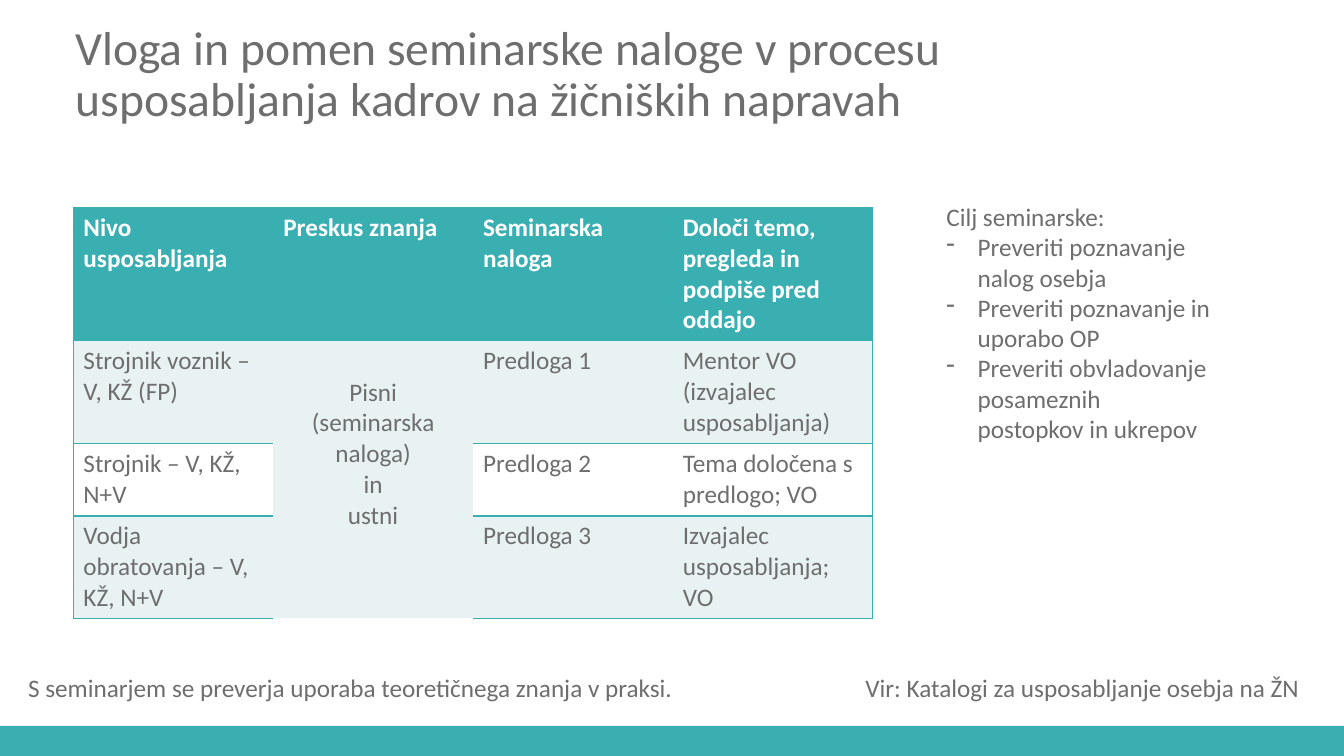
from dataclasses import dataclass

from lxml.etree import SubElement
from pptx import Presentation
from pptx.dml.color import RGBColor
from pptx.enum.shapes import MSO_SHAPE
from pptx.enum.text import MSO_ANCHOR, MSO_AUTO_SIZE, PP_ALIGN
from pptx.oxml.ns import qn
from pptx.util import Cm, Pt


@dataclass(frozen=True)
class Theme:
    font: str = "Calibri"
    title_size: int = 34
    body_size: int = 18
    accent: str = "3AAFB2"
    tint: str = "E8F2F2"
    text: str = "6E6E6E"
    white: str = "FFFFFF"


@dataclass(frozen=True)
class Box:
    left: float
    top: float
    width: float
    height: float

    def lengths(self):
        return Cm(self.left), Cm(self.top), Cm(self.width), Cm(self.height)


THEME = Theme()
PAGE = Box(0, 0, 33.87, 19.05)
TITLE = "Vloga in pomen seminarske naloge v procesu usposabljanja kadrov na žičniških napravah"
HEADER = ["Nivo usposabljanja", "Preskus znanja", "Seminarska naloga",
          "Določi temo, pregleda in podpiše pred oddajo"]
LEVELS = [
    ["Strojnik voznik – V, KŽ (FP)", "Pisni\n(seminarska naloga)\nin\nustni",
     "Predloga 1", "Mentor VO\n(izvajalec usposabljanja)"],
    ["Strojnik – V, KŽ, N+V", "", "Predloga 2", "Tema določena s predlogo; VO"],
    ["Vodja obratovanja – V, KŽ, N+V", "", "Predloga 3", "Izvajalec usposabljanja; VO"],
]
ROW_HEIGHTS = [3.36, 2.58, 1.83, 2.58]
EXAM_COLUMN = 1
GOALS = ["Preveriti poznavanje nalog osebja", "Preveriti poznavanje in uporabo OP",
         "Preveriti obvladovanje posameznih\npostopkov in ukrepov"]


def color(value):
    return RGBColor.from_string(value)


def add_text(para, text, size=THEME.body_size, ink=THEME.text, bold=False):
    for index, line in enumerate(text.split("\n")):
        if index:
            para.add_line_break()
        span = para.add_run()
        span.text = line
        span.font.name = THEME.font
        span.font.size = Pt(size)
        span.font.bold = bold
        span.font.color.rgb = color(ink)


def set_bullet(para, indent):
    properties = para._p.get_or_add_pPr()
    properties.set("marL", str(Cm(indent)))
    properties.set("indent", str(-Cm(indent)))
    SubElement(properties, qn("a:buFontTx"))
    SubElement(properties, qn("a:buChar")).set("char", "-")


def set_borders(cell, drawn):
    """Draw the named sides and clear the others; borders precede the fill."""
    properties = cell._tc.get_or_add_tcPr()
    for index, side in enumerate("LRTB"):
        line = SubElement(properties, qn(f"a:ln{side}"))
        properties.insert(index, line)
        line.set("w", str(Pt(1)))
        if side in drawn:
            fill = SubElement(line, qn("a:solidFill"))
            SubElement(fill, qn("a:srgbClr")).set("val", THEME.accent)
        else:
            SubElement(line, qn("a:noFill"))


def add_title(page, box):
    title = page.shapes.title
    title.left, title.top, title.width, title.height = box.lengths()
    frame = title.text_frame
    frame.word_wrap = True
    frame.auto_size = MSO_AUTO_SIZE.NONE
    frame.vertical_anchor = MSO_ANCHOR.BOTTOM
    para = frame.paragraphs[0]
    para.alignment = PP_ALIGN.LEFT
    para.line_spacing = 0.9
    add_text(para, TITLE, THEME.title_size)


def add_bottom_bar(page, box):
    bar = page.shapes.add_shape(MSO_SHAPE.RECTANGLE, *box.lengths())
    bar.shadow.inherit = False
    bar.fill.solid()
    bar.fill.fore_color.rgb = color(THEME.accent)
    bar.line.fill.background()


def add_levels_table(page, box):
    rows = [HEADER] + LEVELS
    last_row, last_column = len(rows) - 1, len(HEADER) - 1
    table = page.shapes.add_table(len(rows), len(HEADER), *box.lengths()).table
    for column in table.columns:
        column.width = Cm(box.width / len(HEADER))
    for row, height in zip(table.rows, ROW_HEIGHTS):
        row.height = Cm(height)

    # Cells: fill, outline and text
    for r, texts in enumerate(rows):
        for c, text in enumerate(texts):
            cell = table.cell(r, c)
            exam = c == EXAM_COLUMN and r > 0
            fill = THEME.accent if r == 0 else THEME.tint if r % 2 or exam else THEME.white
            cell.fill.solid()
            cell.fill.fore_color.rgb = color(fill)
            sides = "L" * (c == 0) + "R" * (c == last_column)
            sides += "T" * (r == 0 or not exam) + "B" * (r == last_row or not exam)
            set_borders(cell, sides)
            if text:
                ink = THEME.text if r else THEME.white
                add_text(cell.text_frame.paragraphs[0], text, ink=ink, bold=r == 0)

    # One exam cell spans all levels
    exam_cell = table.cell(1, EXAM_COLUMN)
    exam_cell.merge(table.cell(last_row, EXAM_COLUMN))
    exam_cell.margin_top = Cm(0.91)
    exam_cell.text_frame.paragraphs[0].alignment = PP_ALIGN.CENTER


def add_goals(page, box):
    frame = page.shapes.add_textbox(*box.lengths()).text_frame
    frame.word_wrap = True
    add_text(frame.paragraphs[0], "Cilj seminarske:")
    for goal in GOALS:
        para = frame.add_paragraph()
        set_bullet(para, 0.79)
        add_text(para, goal)


def add_note(page, box, text):
    frame = page.shapes.add_textbox(*box.lengths()).text_frame
    frame.word_wrap = False
    add_text(frame.paragraphs[0], text)


def main():
    deck = Presentation()
    deck.slide_width, deck.slide_height = Cm(PAGE.width), Cm(PAGE.height)
    page = deck.slides.add_slide(deck.slide_layouts[5])
    add_bottom_bar(page, Box(0, 18.29, PAGE.width, 0.76))
    add_title(page, Box(1.65, 0.25, 26.24, 3.07))
    add_levels_table(page, Box(1.85, 5.23, 20.14, sum(ROW_HEIGHTS)))
    add_goals(page, Box(23.6, 4.95, 7.49, 6.4))
    add_note(page, Box(0.46, 16.81, 16.94, 1.02),
             "S seminarjem se preverja uporaba teoretičnega znanja v praksi.")
    add_note(page, Box(21.56, 16.81, 11.56, 1.02),
             "Vir: Katalogi za usposabljanje osebja na ŽN")
    deck.save("out.pptx")


if __name__ == "__main__":
    main()
